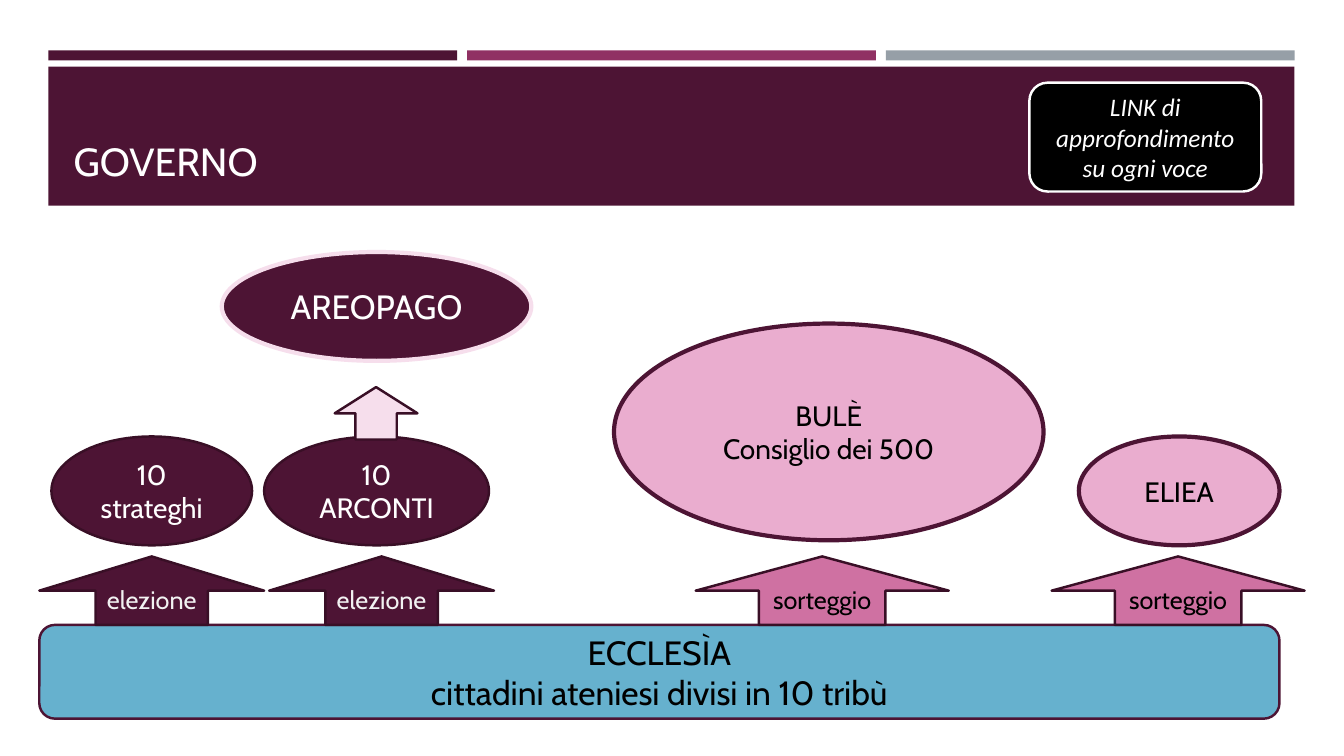
from collections import namedtuple

from pptx import Presentation
from pptx.dml.color import RGBColor
from pptx.enum.shapes import MSO_SHAPE
from pptx.enum.text import MSO_ANCHOR, MSO_AUTO_SIZE, PP_ALIGN
from pptx.util import Inches, Pt

RECTANGLE = MSO_SHAPE.RECTANGLE
ROUNDED = MSO_SHAPE.ROUNDED_RECTANGLE
ELLIPSE = MSO_SHAPE.OVAL
UP_ARROW = MSO_SHAPE.UP_ARROW
CENTER, LEFT = PP_ALIGN.CENTER, PP_ALIGN.LEFT
MIDDLE, BOTTOM = MSO_ANCHOR.MIDDLE, MSO_ANCHOR.BOTTOM
NO_AUTOFIT = MSO_AUTO_SIZE.NONE
TITLE_ONLY = 5

COLORS = {
    "plum": "4D1434", "dark plum": "390F26", "magenta": "903163",
    "gray": "969FA7", "blue": "66B1CE", "rose": "CF71A2", "pink": "EAADCF",
    "pale pink": "F6DEEC", "off white": "F2F2F2",
    "white": "FFFFFF", "black": "000000",
}

Box = namedtuple("Box", "left top width height")
SLIDE = Box(0, 0, 13.33, 7.5)
HEADER = Box(0.48, 0.5, 12.36, 1.54)
DIAGRAM = Box(0.39, 2.5, 12.55, 4.63)


def color(name):
    return RGBColor.from_string(COLORS[name])


def inches(box):
    return [Inches(length) for length in box]


def write(shape, text, size, ink, font="Cabin", italic=False,
          align=CENTER, anchor=MIDDLE):
    frame = shape.text_frame
    frame.text = text
    frame.word_wrap = True
    frame.auto_size = NO_AUTOFIT
    frame.vertical_anchor = anchor
    for para in frame.paragraphs:
        para.alignment = align
        for span in para.runs:
            span.font.name = font
            span.font.size = Pt(size)
            span.font.italic = italic
            span.font.color.rgb = color(ink)


def add_figure(slide, kind, box, fill, line=None, weight=1.75):
    shape = slide.shapes.add_shape(kind, *inches(box))
    shape.shadow.inherit = False
    shape.fill.solid()
    shape.fill.fore_color.rgb = color(fill)
    if line:
        shape.line.color.rgb = color(line)
        shape.line.width = Pt(weight)
    else:
        shape.line.fill.background()
    return shape


def build_header(slide, box):
    gap = 0.1
    stripe = (box.width - 2 * gap) / 3
    for column, fill in enumerate(("plum", "magenta", "gray")):
        left = box.left + column * (stripe + gap)
        add_figure(slide, RECTANGLE, Box(left, box.top, stripe, 0.1), fill)
    band = Box(box.left, box.top + 0.16, box.width, box.height - 0.16)
    add_figure(slide, RECTANGLE, band, "plum")

    title = slide.shapes.title
    title.left, title.top, title.width, title.height = inches(
        Box(band.left + 0.15, band.top + 0.14, band.width - 0.3, 1.08))
    write(title, "GOVERNO", 28, "white", align=LEFT, anchor=BOTTOM)
    slide.shapes._spTree.append(title._element)  # above the band

    note = add_figure(slide, ROUNDED,
                      Box(band.left + 9.73, band.top + 0.16, 2.3, 1.08),
                      "black", "white")
    write(note, "LINK di approfondimento su ogni voce", 18, "white",
          font="Calibri", italic=True)


def build_diagram(slide, box):
    """Assembly at the foot, one arrow per body above it, Areopagus on top."""
    base_height, arrow_height, body_height = 0.93, 0.68, 1.08
    base_top = box.top + box.height - base_height
    arrow_top = base_top - arrow_height
    body_bottom = arrow_top - 0.11

    base = add_figure(slide, ROUNDED,
                      Box(box.left, base_top, 12.3, base_height), "blue", "plum")
    write(base, "ECCLESÌA\ncittadini ateniesi divisi in 10 tribù", 24, "black")

    elected = ("elezione", 2.23, "plum", "off white")
    drawn = ("sorteggio", 2.51, "rose", "black")
    dark = ("plum", "dark plum", 1.75, "white")
    light = ("pink", "plum", 3, "black")
    # arrow left, arrow style, body text, body left, width, height, body style
    columns = [
        (0, elected, "10 strateghi", 0.12, 1.99, body_height, dark),
        (2.28, elected, "10 ARCONTI", 2.23, 2.23, body_height, dark),
        (6.51, drawn, "BULÈ\nConsiglio dei 500", 5.7, 4.26, 2.15, light),
        (10.04, drawn, "ELIEA", 10.31, 1.99, body_height, light),
    ]
    for arrow_left, arrow_style, name, left, width, height, style in columns:
        method, arrow_width, arrow_fill, arrow_ink = arrow_style
        arrow = add_figure(
            slide, UP_ARROW,
            Box(box.left + arrow_left, arrow_top, arrow_width, arrow_height),
            arrow_fill, "dark plum")
        write(arrow, method, 18, arrow_ink)

        fill, line, weight, ink = style
        bottom = body_bottom - (0.05 if height > body_height else 0)
        body = add_figure(slide, ELLIPSE,
                          Box(box.left + left, bottom - height, width, height),
                          fill, line, weight)
        write(body, name, 20, ink)

    center = box.left + 3.34
    add_figure(slide, UP_ARROW, Box(center - 0.41, box.top + 1.34, 0.82, 0.52),
               "pale pink", "dark plum")
    areopagus = add_figure(slide, ELLIPSE,
                           Box(center - 1.53, box.top, 3.07, body_height),
                           "plum", "pale pink", 3)
    write(areopagus, "AREOPAGO", 24, "white")


def main():
    deck = Presentation()
    deck.slide_width, deck.slide_height = Inches(SLIDE.width), Inches(SLIDE.height)
    slide = deck.slides.add_slide(deck.slide_layouts[TITLE_ONLY])
    build_header(slide, HEADER)
    build_diagram(slide, DIAGRAM)
    deck.save("out.pptx")


if __name__ == "__main__":
    main()
